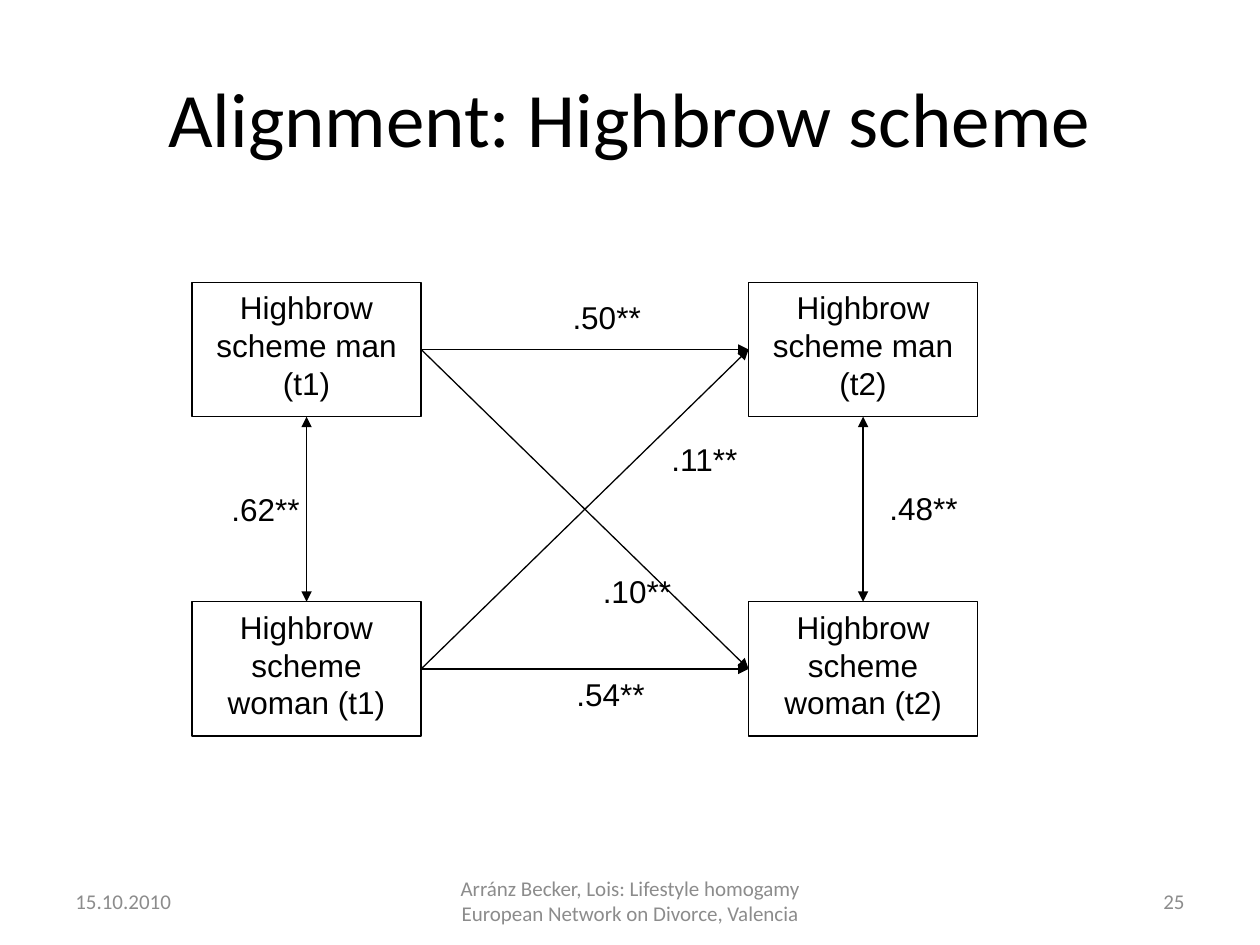
"""Build the cross-lagged path diagram slide for the highbrow scheme."""
from lxml.etree import SubElement
from pptx import Presentation
from pptx.dml.color import RGBColor
from pptx.enum.shapes import MSO_CONNECTOR as CONN, MSO_SHAPE as SHAPE
from pptx.enum.text import MSO_ANCHOR as ANCHOR, PP_ALIGN as ALIGN
from pptx.oxml.ns import qn
from pptx.util import Cm, Pt


def rgb(value):
    return RGBColor.from_string(value)


def set_text(s, text, size, font, color="000000", align=ALIGN.CENTER, anchor=ANCHOR.TOP):
    tf = s.text_frame
    tf.word_wrap = True
    tf.vertical_anchor = anchor
    tf.text = text
    p = tf.paragraphs[0]
    p.alignment = align
    r = p.runs[0]
    r.font.size = Pt(size)
    r.font.name = font
    r.font.color.rgb = rgb(color)


prs = Presentation()
prs.slide_width, prs.slide_height = Cm(25.4), Cm(19.05)
sp = prs.slides.add_slide(prs.slide_layouts[6]).shapes

s = sp.add_textbox(Cm(1.27), Cm(0.76), Cm(22.86), Cm(3.18))
set_text(s, "Alignment: Highbrow scheme", 44, "Calibri", anchor=ANCHOR.MIDDLE)

box_w, box_h = 4.62, 2.71
lefts = {"t1": 3.87, "t2": 15.09}
tops = {"man": 5.69, "woman": 12.13}
for time, left in lefts.items():
    for partner, top in tops.items():
        s = sp.add_shape(SHAPE.RECTANGLE, Cm(left), Cm(top), Cm(box_w), Cm(box_h))
        s.shadow.inherit = False
        s.fill.solid()
        s.fill.fore_color.rgb = rgb("FFFFFF")
        s.line.color.rgb = rgb("000000")
        s.line.width = Pt(0.75)
        set_text(s, f"Highbrow scheme {partner} ({time})", 18, "Arial")

start_x, end_x = lefts["t1"] + box_w, lefts["t2"]
mids = [top + box_h / 2 for top in tops.values()]
paths = [(start_x, y1, end_x, y2, ["tailEnd"]) for y1 in mids for y2 in mids]
for left in lefts.values():
    x = left + box_w / 2
    paths.append((x, tops["man"] + box_h, x, tops["woman"], ["headEnd", "tailEnd"]))

for x1, y1, x2, y2, ends in paths:
    s = sp.add_connector(CONN.STRAIGHT, Cm(x1), Cm(y1), Cm(x2), Cm(y2))
    s.line.color.rgb = rgb("000000")
    s.line.width = Pt(0.75)
    ln = s.line._get_or_add_ln()
    for end in ends:
        SubElement(ln, qn(f"a:{end}"), type="triangle")
    SubElement(s._element.spPr, qn("a:effectLst"))

labels = [
    (".48**", 17.4, 9.73, 2.44),
    (".50**", 11.15, 5.89, 2.16),
    (".54**", 11.33, 13.49, 1.96),
    (".10**", 11.71, 11.4, 2.26),
    (".11**", 13.11, 8.74, 2.18),
    (".62**", 3.96, 9.75, 2.79),
]
for text, left, top, width in labels:
    s = sp.add_textbox(Cm(left), Cm(top), Cm(width), Cm(1.02))
    set_text(s, text, 18, "Arial")

footers = [
    ("15.10.2010", 1.27, 5.92, ALIGN.LEFT),
    ("Arránz Becker, Lois: Lifestyle homogamy European Network on Divorce, Valencia",
     8.68, 8.05, ALIGN.CENTER),
    ("25", 18.21, 5.92, ALIGN.RIGHT),
]
for text, left, width, align in footers:
    s = sp.add_textbox(Cm(left), Cm(17.65), Cm(width), Cm(1.02))
    set_text(s, text, 12, "Calibri", "8C8C8C", align, ANCHOR.MIDDLE)

prs.save("out.pptx")
